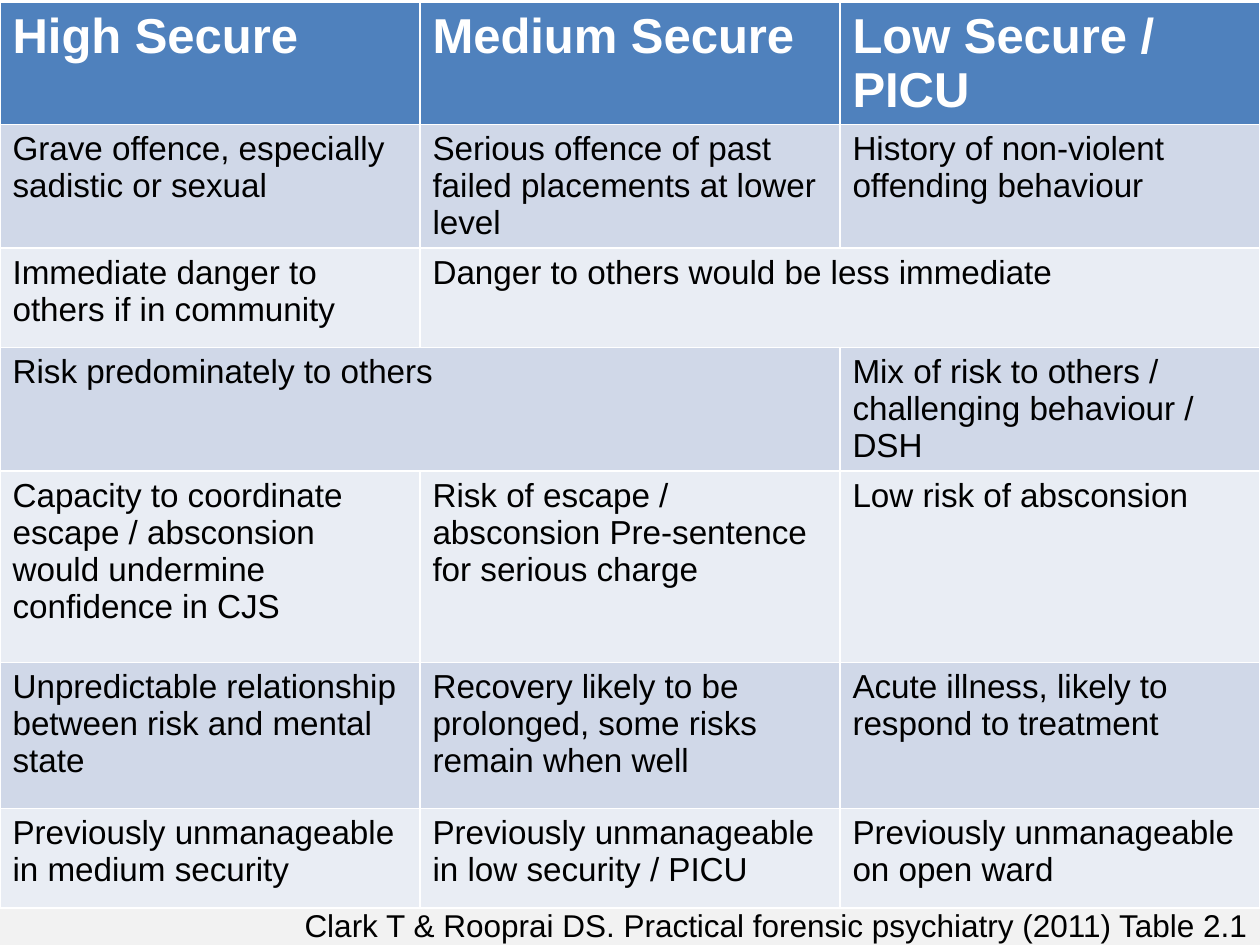
from typing import NamedTuple

from pptx import Presentation
from pptx.dml.color import RGBColor
from pptx.enum.shapes import MSO_SHAPE
from pptx.enum.text import PP_ALIGN
from pptx.util import Inches, Pt

HUES = {
    "head": "4F81BD",
    "dark": "D0D8E8",
    "light": "E9EDF4",
    "strip": "F2F2F2",
    "white": "FFFFFF",
    "black": "000000",
}


class Entry(NamedTuple):
    text: str
    span: int = 1


class Row(NamedTuple):
    height: float
    cells: list[Entry]


ROWS = [
    Row(0.87, [Entry("High Secure"), Entry("Medium Secure"),
               Entry("Low Secure / PICU")]),
    Row(0.79, [Entry("Grave offence, especially sadistic or sexual"),
               Entry("Serious offence of past failed placements at lower level"),
               Entry("History of non-violent offending behaviour")]),
    Row(0.79, [Entry("Immediate danger to others if in community"),
               Entry("Danger to others would be less immediate", span=2)]),
    Row(0.97, [Entry("Risk predominately to others", span=2),
               Entry("Mix of risk to others / challenging behaviour / DSH")]),
    Row(1.52, [Entry("Capacity to coordinate escape / absconsion would "
                     "undermine confidence in CJS"),
               Entry("Risk of escape / absconsion Pre-sentence for serious charge"),
               Entry("Low risk of absconsion")]),
    Row(1.16, [Entry("Unpredictable relationship between risk and mental state"),
               Entry("Recovery likely to be prolonged, some risks remain when well"),
               Entry("Acute illness, likely to respond to treatment")]),
    Row(0.79, [Entry("Previously unmanageable in medium security"),
               Entry("Previously unmanageable in low security / PICU"),
               Entry("Previously unmanageable on open ward")]),
]
COLS = 3


def paint(fill, hue: str) -> None:
    fill.solid()
    fill.fore_color.rgb = RGBColor.from_string(HUES[hue])


def write(frame, text: str, *, size: float = 19, hue: str = "black",
          bold: bool = False, align=PP_ALIGN.LEFT) -> None:
    frame.word_wrap = True
    para = frame.paragraphs[0]
    para.alignment = align
    run = para.add_run()
    run.text = text
    run.font.name = "Arial"
    run.font.size = Pt(size)
    run.font.bold = bold
    run.font.color.rgb = RGBColor.from_string(HUES[hue])


def add_strip(slide) -> None:
    strip = slide.shapes.add_shape(
        MSO_SHAPE.RECTANGLE, 0, Inches(6.81), Inches(10), Inches(0.69))
    strip.shadow.inherit = False
    paint(strip.fill, "strip")
    strip.line.fill.background()


def fill_row(table, index: int, row: Row) -> None:
    head = index == 0
    shade = "head" if head else "dark" if index % 2 else "light"
    style = {"size": 28, "hue": "white", "bold": True} if head else {}
    table.rows[index].height = Inches(row.height)
    for cell in table.rows[index].cells:
        paint(cell.fill, shade)
    col = 0
    for entry in row.cells:
        cell = table.cell(index, col)
        if entry.span > 1:
            cell.merge(table.cell(index, col + entry.span - 1))
        write(cell.text_frame, entry.text, **style)
        col += entry.span


def add_grid(slide) -> None:
    total = sum(row.height for row in ROWS)
    table = slide.shapes.add_table(
        len(ROWS), COLS, 0, Inches(0.02), Inches(10), Inches(total)).table
    for index, row in enumerate(ROWS):
        fill_row(table, index, row)


def add_source(slide) -> None:
    box = slide.shapes.add_textbox(0, Inches(7.14), Inches(10), Inches(0.4))
    write(box.text_frame,
          "Clark T & Rooprai DS. Practical forensic psychiatry (2011) Table 2.1",
          size=18, align=PP_ALIGN.RIGHT)


def main() -> None:
    deck = Presentation()
    deck.slide_width, deck.slide_height = Inches(10), Inches(7.5)
    slide = deck.slides.add_slide(deck.slide_layouts[6])
    # Footer strip behind the table
    add_strip(slide)
    # Comparison of security levels
    add_grid(slide)
    # Citation
    add_source(slide)
    deck.save("out.pptx")


if __name__ == "__main__":
    main()
